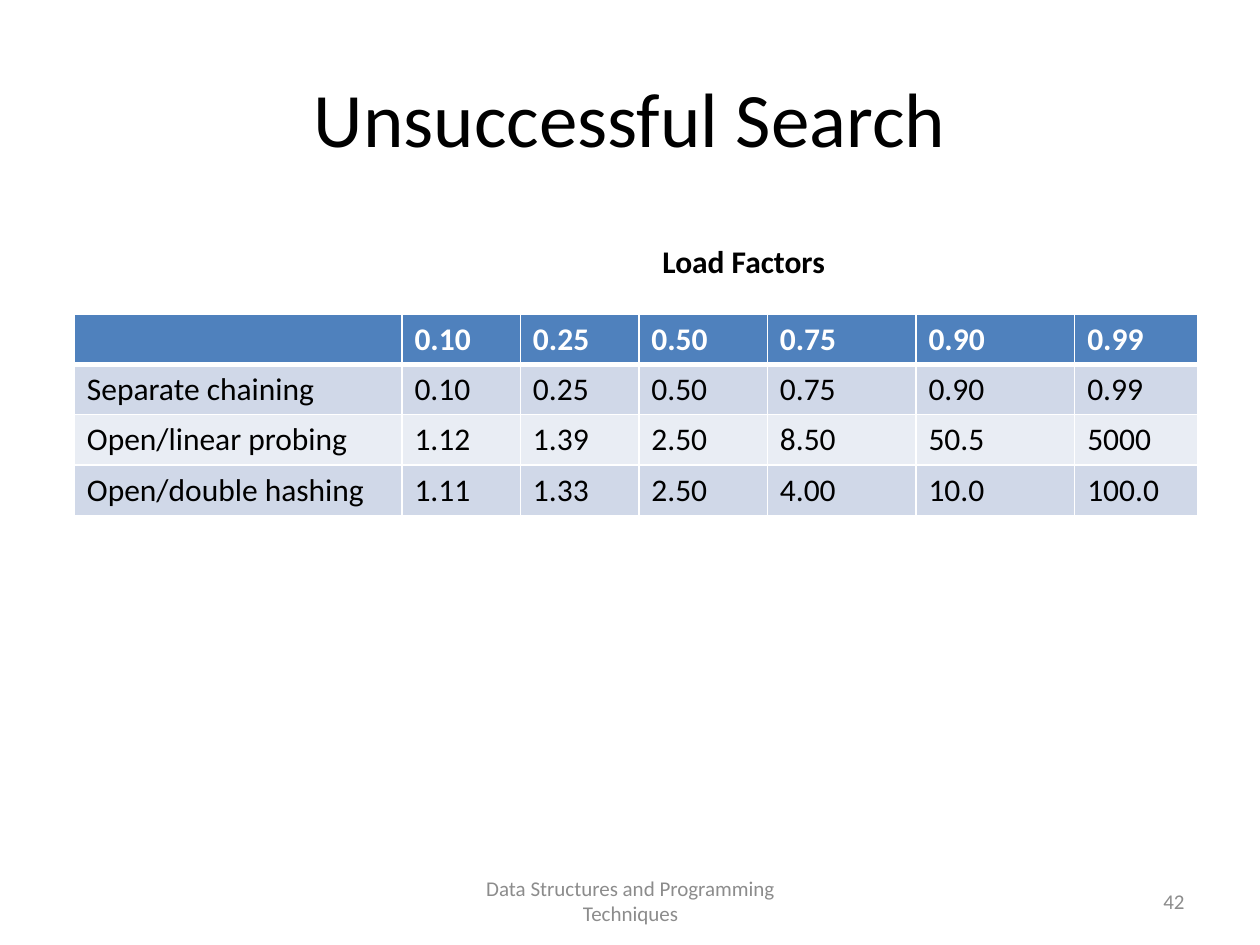
from dataclasses import dataclass

from lxml.etree import SubElement
from pptx import Presentation
from pptx.dml.color import RGBColor
from pptx.enum.text import MSO_ANCHOR, PP_ALIGN
from pptx.oxml.ns import qn
from pptx.util import Inches, Pt


@dataclass(frozen=True)
class Theme:
    font: str = "Calibri"
    ink: str = "000000"
    muted: str = "8C8C8C"
    white: str = "FFFFFF"
    header: str = "4F81BD"
    bands: tuple = ("D0D8E8", "E9EDF4")
    title_size: int = 44
    body_size: int = 18
    footer_size: int = 12
    rule: int = 1
    header_rule: int = 3


COLUMN_WIDTHS = [2.6, 0.94, 0.94, 1.02, 1.18, 1.26, 0.98]
ROW_HEIGHT = 0.4
PROBE_COUNTS = [
    ["", "0.10", "0.25", "0.50", "0.75", "0.90", "0.99"],
    ["Separate chaining", "0.10", "0.25", "0.50", "0.75", "0.90", "0.99"],
    ["Open/linear probing", "1.12", "1.39", "2.50", "8.50", "50.5", "5000"],
    ["Open/double hashing", "1.11", "1.33", "2.50", "4.00", "10.0", "100.0"],
]


def write_text(frame, text, *, font, size, color, bold=False,
               align=PP_ALIGN.LEFT, anchor=MSO_ANCHOR.TOP):
    frame.word_wrap = True
    frame.vertical_anchor = anchor
    paragraph = frame.paragraphs[0]
    paragraph.alignment = align
    run = paragraph.add_run()
    run.text = text
    run.font.name = font
    run.font.size = Pt(size)
    run.font.bold = bold
    run.font.color.rgb = RGBColor.from_string(color)


def draw_borders(cell, color, widths):
    """Draw cell edges; widths are points for left, right, top, bottom."""
    properties = cell._tc.get_or_add_tcPr()
    for edge, width in zip("LRTB", widths):
        line = SubElement(properties, qn(f"a:ln{edge}"), w=str(Pt(width)))
        fill = SubElement(line, qn("a:solidFill"))
        SubElement(fill, qn("a:srgbClr"), val=color)


class SlideBuilder:
    def __init__(self, slide, theme):
        self.slide = slide
        self.theme = theme

    def title(self, text, left, top, width, height):
        heading = self.slide.shapes.title
        heading.left, heading.top = Inches(left), Inches(top)
        heading.width, heading.height = Inches(width), Inches(height)
        write_text(heading.text_frame, text, font=self.theme.font,
                   size=self.theme.title_size, color=self.theme.ink,
                   align=PP_ALIGN.CENTER, anchor=MSO_ANCHOR.MIDDLE)

    def label(self, text, left, top, width, height, **text_format):
        box = self.slide.shapes.add_textbox(
            Inches(left), Inches(top), Inches(width), Inches(height))
        write_text(box.text_frame, text, font=self.theme.font, **text_format)

    def footer(self, text, left, width, align):
        self.label(text, left, 6.95, width, 0.4, size=self.theme.footer_size,
                   color=self.theme.muted, align=align,
                   anchor=MSO_ANCHOR.MIDDLE)

    def table(self, rows, column_widths, row_height, left, top):
        table = self.slide.shapes.add_table(
            len(rows), len(column_widths), Inches(left), Inches(top),
            Inches(sum(column_widths)), Inches(row_height * len(rows))).table
        for column, width in zip(table.columns, column_widths):
            column.width = Inches(width)
        for row_index, values in enumerate(rows):
            table.rows[row_index].height = Inches(row_height)
            for column_index, value in enumerate(values):
                self.table_cell(table.cell(row_index, column_index),
                                value, row_index)

    def table_cell(self, cell, value, row_index):
        theme = self.theme
        is_header = row_index == 0
        top = theme.header_rule if row_index == 1 else theme.rule
        bottom = theme.header_rule if is_header else theme.rule
        draw_borders(cell, theme.white, (theme.rule, theme.rule, top, bottom))
        band = theme.bands[(row_index - 1) % len(theme.bands)]
        cell.fill.solid()
        cell.fill.fore_color.rgb = RGBColor.from_string(
            theme.header if is_header else band)
        write_text(cell.text_frame, value, font=theme.font,
                   size=theme.body_size, bold=is_header,
                   color=theme.white if is_header else theme.ink)


def main():
    presentation = Presentation()
    presentation.slide_width = Inches(10)
    presentation.slide_height = Inches(7.5)
    title_only = presentation.slide_layouts[5]
    theme = Theme()
    builder = SlideBuilder(presentation.slides.add_slide(title_only), theme)

    builder.title("Unsuccessful Search", 0.5, 0.3, 9, 1.25)
    builder.footer("Data Structures and Programming Techniques",
                   3.42, 3.17, PP_ALIGN.CENTER)
    builder.footer("42", 7.17, 2.33, PP_ALIGN.RIGHT)
    builder.table(PROBE_COUNTS, COLUMN_WIDTHS, ROW_HEIGHT, 0.59, 2.49)
    builder.label("Load Factors", 5.16, 1.87, 1.94, 0.4,
                  size=theme.body_size, color=theme.ink, bold=True)
    presentation.save("out.pptx")


if __name__ == "__main__":
    main()
